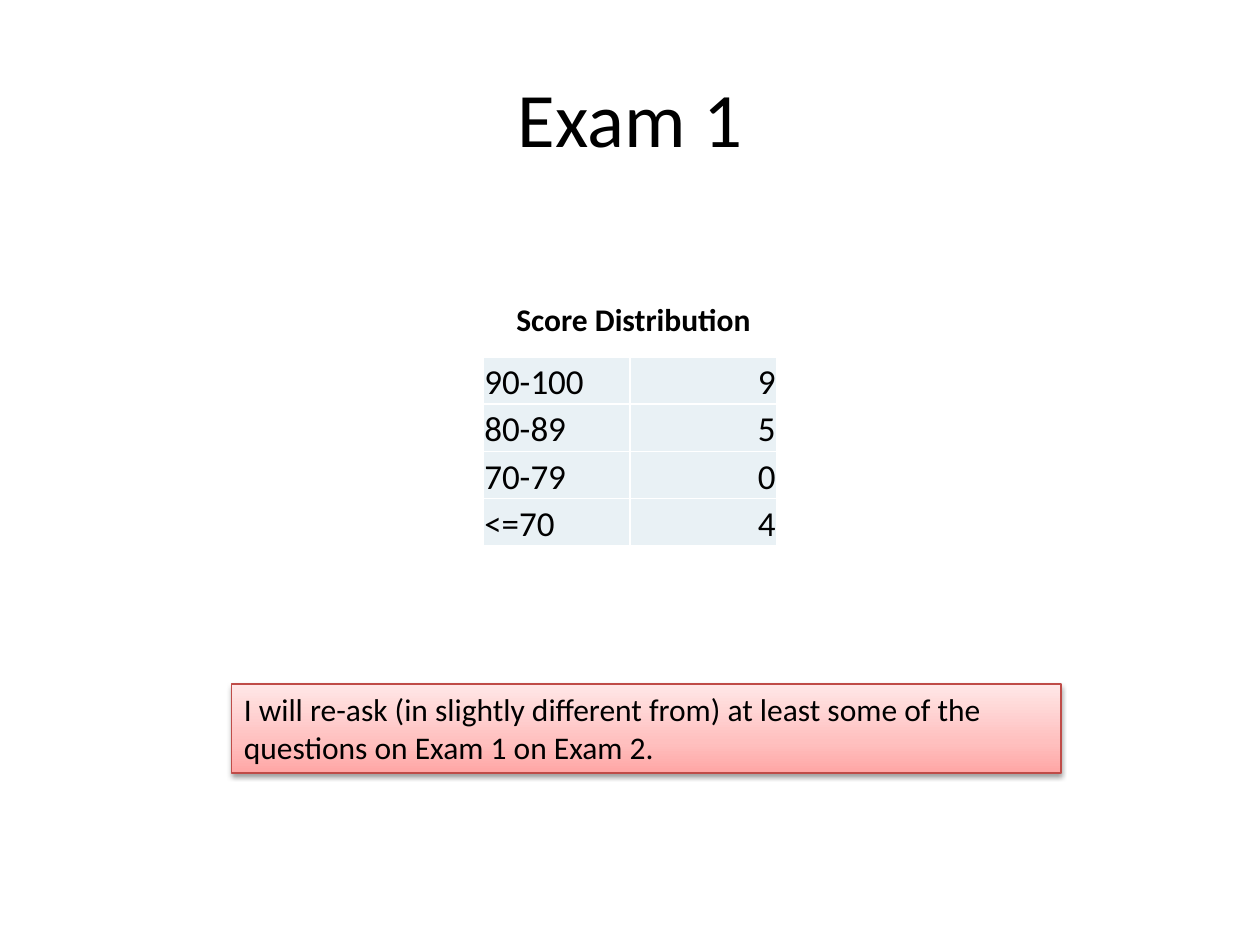
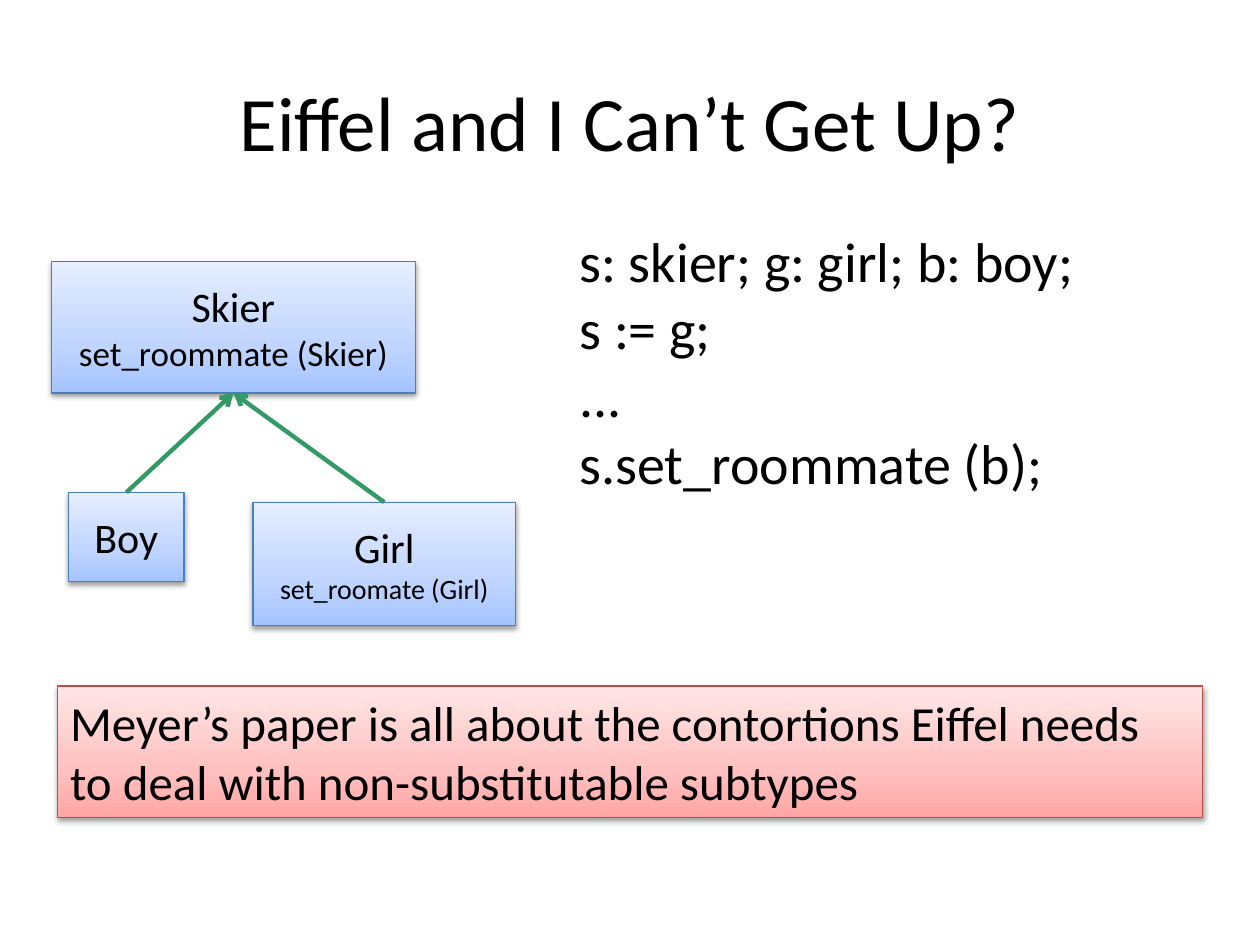
from dataclasses import dataclass

from pptx import Presentation
from pptx.dml.color import RGBColor
from pptx.enum.shapes import MSO_CONNECTOR, MSO_SHAPE
from pptx.enum.text import MSO_ANCHOR, PP_ALIGN
from pptx.oxml import parse_xml
from pptx.oxml.ns import nsdecls
from pptx.util import Pt


# Shared look
@dataclass(frozen=True)
class Theme:
    font: str = "Calibri"
    text: str = "000000"
    border: str = "FFFFFF"
    cell: str = "E9F1F5"
    arrow: str = "339966"
    # Line colour, then gradient colours from bottom to top
    red: tuple = ("BF4C48", "FFA6A5", "FFC0BF", "FFE7E7")
    blue: tuple = ("4B7EBC", "A4C4FF", "BFD4FF", "E6EEFF")
    stops: tuple = (0, 35, 100)
    title: int = 44
    code: int = 32
    large: int = 28
    name: int = 24
    medium: int = 20
    body: int = 18
    small: int = 16


class Deck:
    def __init__(self, theme):
        self.theme = theme
        self.prs = Presentation()
        self.prs.slide_width, self.prs.slide_height = Pt(720), Pt(540)
        self.s = None

    def new_slide(self):
        self.s = self.prs.slides.add_slide(self.prs.slide_layouts[6])

    def fill_text(self, tf, lines, sizes, align=PP_ALIGN.LEFT, bold=False):
        """Fill a text frame, one paragraph and one size per line."""
        tf.text = "\n".join(lines)
        for p, size in zip(tf.paragraphs, sizes):
            p.alignment = align
            for r in p.runs:
                r.font.name, r.font.size, r.font.bold = self.theme.font, Pt(size), bold
                r.font.color.rgb = RGBColor.from_string(self.theme.text)

    def text(self, box, lines, size, align=PP_ALIGN.LEFT, bold=False,
             wrap=True, anchor=MSO_ANCHOR.TOP, indent=0):
        tf = self.s.shapes.add_textbox(*map(Pt, box)).text_frame
        tf.word_wrap, tf.vertical_anchor = wrap, anchor
        self.fill_text(tf, lines, [size] * len(lines), align, bold)
        if indent:
            for p in tf.paragraphs:
                p._p.get_or_add_pPr().set("marL", str(Pt(indent)))

    def title(self, box, text):
        self.text(box, [text], self.theme.title, PP_ALIGN.CENTER,
                  anchor=MSO_ANCHOR.MIDDLE)

    def panel(self, box, colors, lines, sizes, align=PP_ALIGN.LEFT,
              wrap=True, margins=(7.2, 3.6)):
        """Rectangle with an upward gradient and a soft shadow."""
        sp = self.s.shapes.add_shape(MSO_SHAPE.RECTANGLE, *map(Pt, box))
        line, *shades = colors
        stops = "".join(
            f'<a:gs pos="{pos * 1000}"><a:srgbClr val="{shade}"/></a:gs>'
            for pos, shade in zip(self.theme.stops, shades))
        sp._element.spPr.append(parse_xml(
            f'<a:gradFill {nsdecls("a")} rotWithShape="1"><a:gsLst>{stops}</a:gsLst>'
            '<a:lin ang="16200000" scaled="0"/></a:gradFill>'))
        sp.line.color.rgb = RGBColor.from_string(line)
        sp.line.width = Pt(0.75)
        sp._element.spPr.append(parse_xml(
            f'<a:effectLst {nsdecls("a")}><a:outerShdw blurRad="{Pt(3.1)}" '
            f'dist="{Pt(1.6)}" dir="5400000" rotWithShape="0"><a:srgbClr val="000000">'
            '<a:alpha val="38000"/></a:srgbClr></a:outerShdw></a:effectLst>'))
        tf = sp.text_frame
        tf.word_wrap, tf.vertical_anchor = wrap, MSO_ANCHOR.TOP
        tf.margin_left = tf.margin_right = Pt(margins[0])
        tf.margin_top = tf.margin_bottom = Pt(margins[1])
        self.fill_text(tf, lines, sizes, align)
        return sp

    def class_box(self, box, lines, sizes):
        return self.panel(box, self.theme.blue, lines, sizes, PP_ALIGN.CENTER,
                          wrap=False, margins=(14.4, 10.8))

    def inherits(self, child, parent):
        """Arrow from the top of the child to the bottom of the parent."""
        line = self.s.shapes.add_connector(MSO_CONNECTOR.STRAIGHT, 0, 0, 0, 0)
        line.begin_connect(child, 0)
        line.end_connect(parent, 2)
        line.line.color.rgb = RGBColor.from_string(self.theme.arrow)
        line.line.width = Pt(2.5)
        line.line._ln.append(parse_xml(f'<a:tailEnd {nsdecls("a")} type="arrow"/>'))
        line._element.spPr.append(parse_xml(f'<a:effectLst {nsdecls("a")}/>'))

    def table(self, box, rows):
        table = self.s.shapes.add_table(len(rows), len(rows[0]), *map(Pt, box)).table
        table.first_row = table.horz_banding = False
        for i, row in enumerate(rows):
            for j, value in enumerate(row):
                cell = table.cell(i, j)
                cell.margin_left = cell.margin_right = cell.margin_top = Pt(0.75)
                cell.margin_bottom = 0
                cell.vertical_anchor = MSO_ANCHOR.BOTTOM
                self.fill_text(cell.text_frame, [value], [self.theme.medium],
                               PP_ALIGN.RIGHT if j else PP_ALIGN.LEFT)
                for side in "LRTB":
                    cell._tc.get_or_add_tcPr().append(parse_xml(
                        f'<a:ln{side} {nsdecls("a")} w="{Pt(1)}"><a:solidFill><a:srgbClr '
                        f'val="{self.theme.border}"/></a:solidFill></a:ln{side}>'))
                cell.fill.solid()
                cell.fill.fore_color.rgb = RGBColor.from_string(self.theme.cell)


def exam_slide(deck):
    t = deck.theme
    deck.new_slide()
    deck.title((36, 21.6, 648, 90), "Exam 1")

    # Scores
    deck.table((276, 204, 168, 108),
               [("90-100", "9"), ("80-89", "5"), ("70-79", "0"), ("<=70", "4")])
    deck.text((288, 168, 150, 29), ["Score Distribution"], t.body, bold=True, wrap=False)

    # Note
    deck.panel((132.3, 390.8, 474, 51), t.red,
               ["I will re-ask (in slightly different from) at least some of the "
                "questions on Exam 1 on Exam 2."], [t.body])


def eiffel_slide(deck):
    t = deck.theme
    deck.new_slide()
    deck.title((54, 24, 612, 90), "Eiffel and I Can’t Get Up?")

    # Class diagram
    skier = deck.class_box((29.4, 149.6, 208, 75),
                           ["Skier", "set_roommate (Skier)"], [t.name, t.medium])
    boy = deck.class_box((39.2, 281.4, 66, 51), ["Boy"], [t.name])
    girl = deck.class_box((144.6, 287, 150, 70.6),
                          ["Girl", "set_roomate (Girl)"], [t.name, t.small])
    for child in (boy, girl):
        deck.inherits(child, skier)

    # Conclusion
    deck.panel((33, 392, 654, 75), t.red,
               ["Meyer’s paper is all about the contortions Eiffel needs to deal "
                "with non-substitutable subtypes"], [t.large])

    # Code
    deck.text((297, 126, 387, 174),
              ["s: skier; g: girl; b: boy;", "s := g;", "...", "s.set_roommate (b);"],
              t.code, indent=27)


def main():
    deck = Deck(Theme())
    exam_slide(deck)
    eiffel_slide(deck)
    deck.prs.save("out.pptx")


if __name__ == "__main__":
    main()
